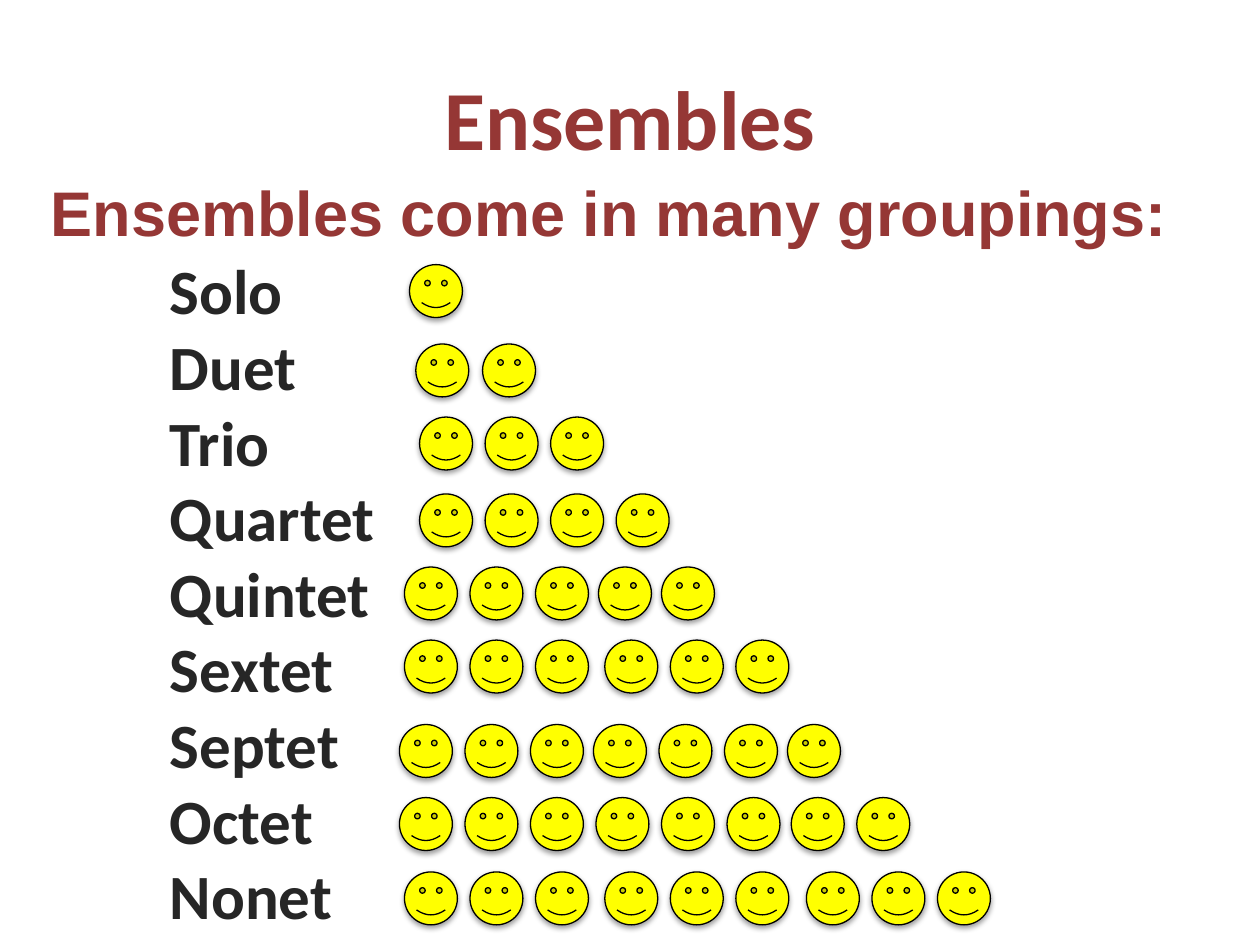
"""Build the Ensembles slide: group names beside rows of smiley faces."""
from lxml import etree
from pptx import Presentation
from pptx import util as u
from pptx.dml.color import RGBColor
from pptx.enum import shapes, text
from pptx.oxml.ns import qn

PX = u.Inches(1) // 100
RED = RGBColor(0x95, 0x37, 0x35)
DARK = RGBColor(0x26, 0x26, 0x26)
YELLOW = RGBColor(0xFF, 0xFF, 0x00)
BLACK = RGBColor(0x00, 0x00, 0x00)
FACE, PITCH = 42, 52

ENSEMBLES = [
    ("Solo", 210, [(325, 1)]),
    ("Duet", 273, [(330, 1), (383, 1)]),
    ("Trio", 331, [(333, 3)]),
    ("Quartet", 392, [(333, 4)]),
    ("Quintet", 450, [(321, 3), (475, 1), (525, 1)]),
    ("Sextet", 508, [(321, 3), (480, 3)]),
    ("Septet", 575, [(317, 3), (471, 3), (625, 1)]),
    ("Octet", 633, [(317, 3), (473, 3), (628, 2)]),
    ("Nonet", 692, [(321, 3), (480, 3), (640, 3)]),
]


def write(box, lines, font, size, color, align):
    frame = box.text_frame
    frame.text = "\n".join(lines)
    for para in frame.paragraphs:
        para.alignment = align
        for span in para.runs:
            span.font.name = font
            span.font.size = u.Pt(size)
            span.font.bold = True
            span.font.color.rgb = color


def add_face(page, left, top):
    face = page.shapes.add_shape(
        shapes.MSO_SHAPE.SMILEY_FACE, left * PX, top * PX, FACE * PX, FACE * PX)
    face.fill.solid()
    face.fill.fore_color.rgb = YELLOW
    face.line.color.rgb = BLACK
    face.line.width = u.Pt(0.75)
    face.shadow.inherit = False
    effects = face._element.spPr.find(qn("a:effectLst"))
    shadow = etree.SubElement(effects, qn("a:outerShdw"), blurRad="40000",
                              dist="20000", dir="5400000", rotWithShape="0")
    tint = etree.SubElement(shadow, qn("a:srgbClr"), val=str(BLACK))
    etree.SubElement(tint, qn("a:alpha"), val="38000")


deck = Presentation()
deck.slide_width, deck.slide_height = 1000 * PX, 750 * PX
page = deck.slides.add_slide(deck.slide_layouts[5])

title = page.shapes.title
title.left, title.top, title.width, title.height = 50 * PX, 30 * PX, 900 * PX, 125 * PX
title.text_frame.vertical_anchor = text.MSO_ANCHOR.MIDDLE
write(title, ["Ensembles"], "Calibri", 48, RED, text.PP_ALIGN.CENTER)

intro = page.shapes.add_textbox(0, 133 * PX, 967 * PX, 71 * PX)
intro.text_frame.word_wrap = True
write(intro, ["Ensembles come in many groupings:"], "Arial", 36, RED, text.PP_ALIGN.CENTER)

names = page.shapes.add_textbox(125 * PX, 195 * PX, 184 * PX, 555 * PX)
names.text_frame.word_wrap = False
write(names, [name for name, _, _ in ENSEMBLES], "Calibri", 36, DARK, text.PP_ALIGN.LEFT)

for _, top, clusters in ENSEMBLES:
    for start, count in clusters:
        for index in range(count):
            add_face(page, start + index * PITCH, top)

deck.save("out.pptx")
